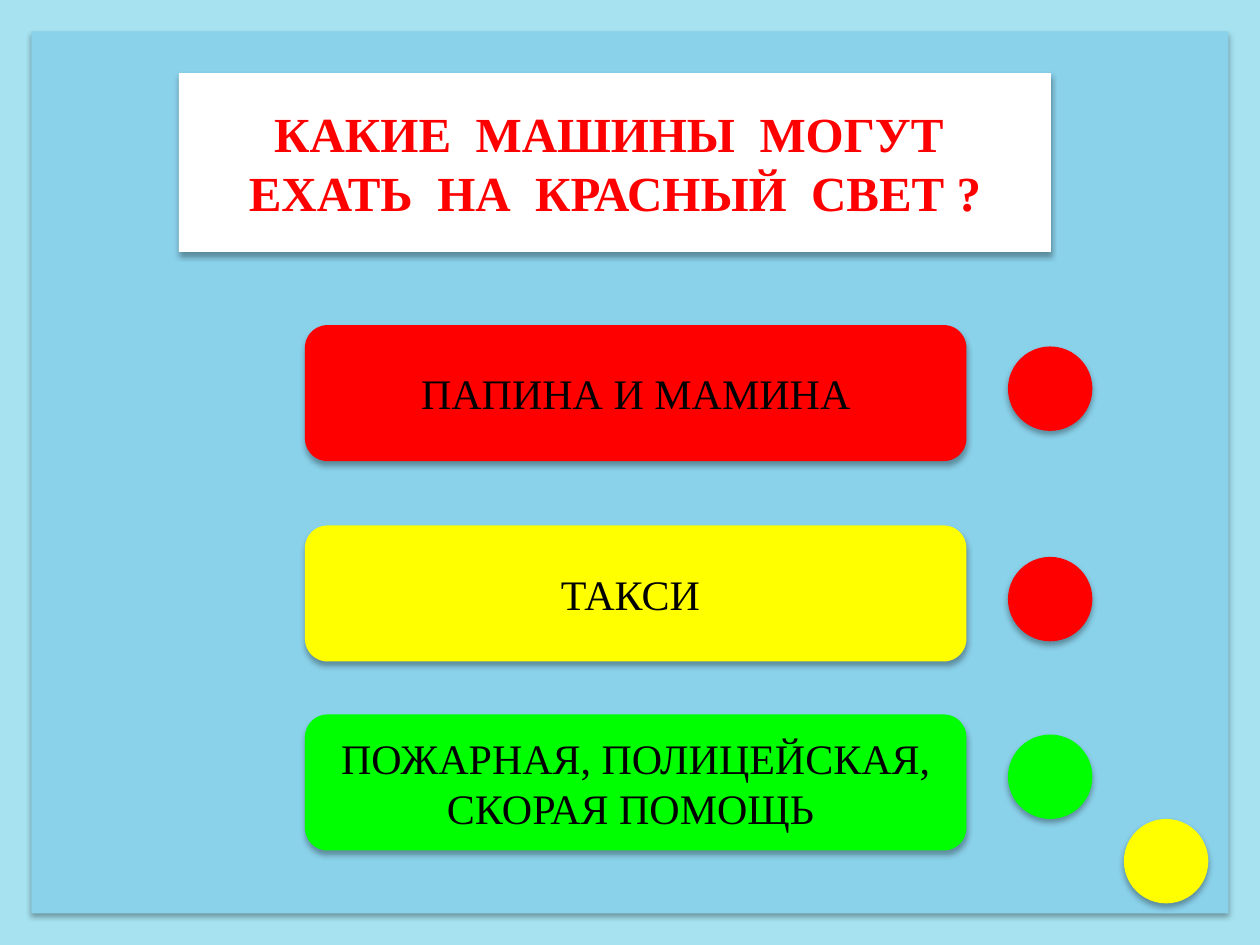
from lxml import etree
from pptx import Presentation
from pptx.dml.color import RGBColor
from pptx.enum import shapes, text
from pptx.oxml.ns import qn
from pptx.util import Inches, Pt

HUES = {"edge": "A6E2F0", "panel": "8AD1EA", "white": "FFFFFF", "black": "000000",
        "red": "FF0000", "yellow": "FFFF00", "green": "00FF00"}
KINDS = shapes.MSO_SHAPE


def hue(name):
    return RGBColor.from_string(HUES[name])


def write(shape, words, size=24, color="black", bold=False, face="Times New Roman"):
    """Fill a shape with centred text, one paragraph per line."""
    frame = shape.text_frame
    frame.word_wrap = True
    frame.auto_size = text.MSO_AUTO_SIZE.NONE
    frame.vertical_anchor = text.MSO_ANCHOR.MIDDLE
    frame.text = words
    for para in frame.paragraphs:
        para.alignment = text.PP_ALIGN.CENTER
        for run in para.runs:
            font = run.font
            font.name, font.size, font.bold = face, Pt(size), bold
            font.color.rgb = hue(color)


class Deck:
    def __init__(self):
        self.prs = Presentation()
        self.prs.slide_width, self.prs.slide_height = Inches(10), Inches(7.5)
        self.slide = self.prs.slides.add_slide(self.prs.slide_layouts[5])

    def style(self, shape, color):
        """Plain fill, no outline, soft shadow below."""
        shape.fill.solid()
        shape.fill.fore_color.rgb = hue(color)
        shape.line.fill.background()
        shape.shadow.inherit = False
        glow = etree.SubElement(
            shape._element.spPr.find(qn("a:effectLst")), qn("a:outerShdw"),
            blurRad=str(Pt(3.5)), dist=str(Pt(2.2)), dir="5400000", rotWithShape="0")
        tint = etree.SubElement(glow, qn("a:srgbClr"), val=HUES["black"])
        etree.SubElement(tint, qn("a:alpha"), val="32000")

    def block(self, kind, color, *box):
        shape = self.slide.shapes.add_shape(kind, *map(Inches, box))
        self.style(shape, color)
        return shape

    def title(self, words, *box):
        shape = self.slide.shapes.title
        shape.left, shape.top, shape.width, shape.height = map(Inches, box)
        self.style(shape, "white")
        write(shape, words, size=28, color="red", bold=True)
        # Bring the title in front of the panels
        self.slide.shapes._spTree.append(shape._element)

    def answer(self, words, color, top):
        write(self.block(KINDS.ROUNDED_RECTANGLE, color, 2.42, top, 5.25, 1.08), words)

    def light(self, color, left, top):
        self.block(KINDS.OVAL, color, left, top, 0.67, 0.67)


def main():
    deck = Deck()

    # Backdrop and inner panel
    deck.block(KINDS.RECTANGLE, "edge", 0, 0, 10, 7.5)
    deck.block(KINDS.RECTANGLE, "panel", 0.25, 0.25, 9.5, 7)

    # Question
    deck.title("КАКИЕ  МАШИНЫ  МОГУТ  ЕХАТЬ  НА  КРАСНЫЙ  СВЕТ ?", 1.42, 0.58, 6.92, 1.42)

    # Answers
    for words, color, top in (
            ("ПАПИНА И МАМИНА", "red", 2.58),
            ("ТАКСИ ", "yellow", 4.17),
            ("ПОЖАРНАЯ, ПОЛИЦЕЙСКАЯ,\nСКОРАЯ ПОМОЩЬ ", "green", 5.67)):
        deck.answer(words, color, top)

    # Lights beside the answers, then the corner one
    for color, top in (("red", 2.75), ("red", 4.42), ("green", 5.83)):
        deck.light(color, 8, top)
    deck.light("yellow", 8.92, 6.5)

    deck.prs.save("out.pptx")


if __name__ == "__main__":
    main()
